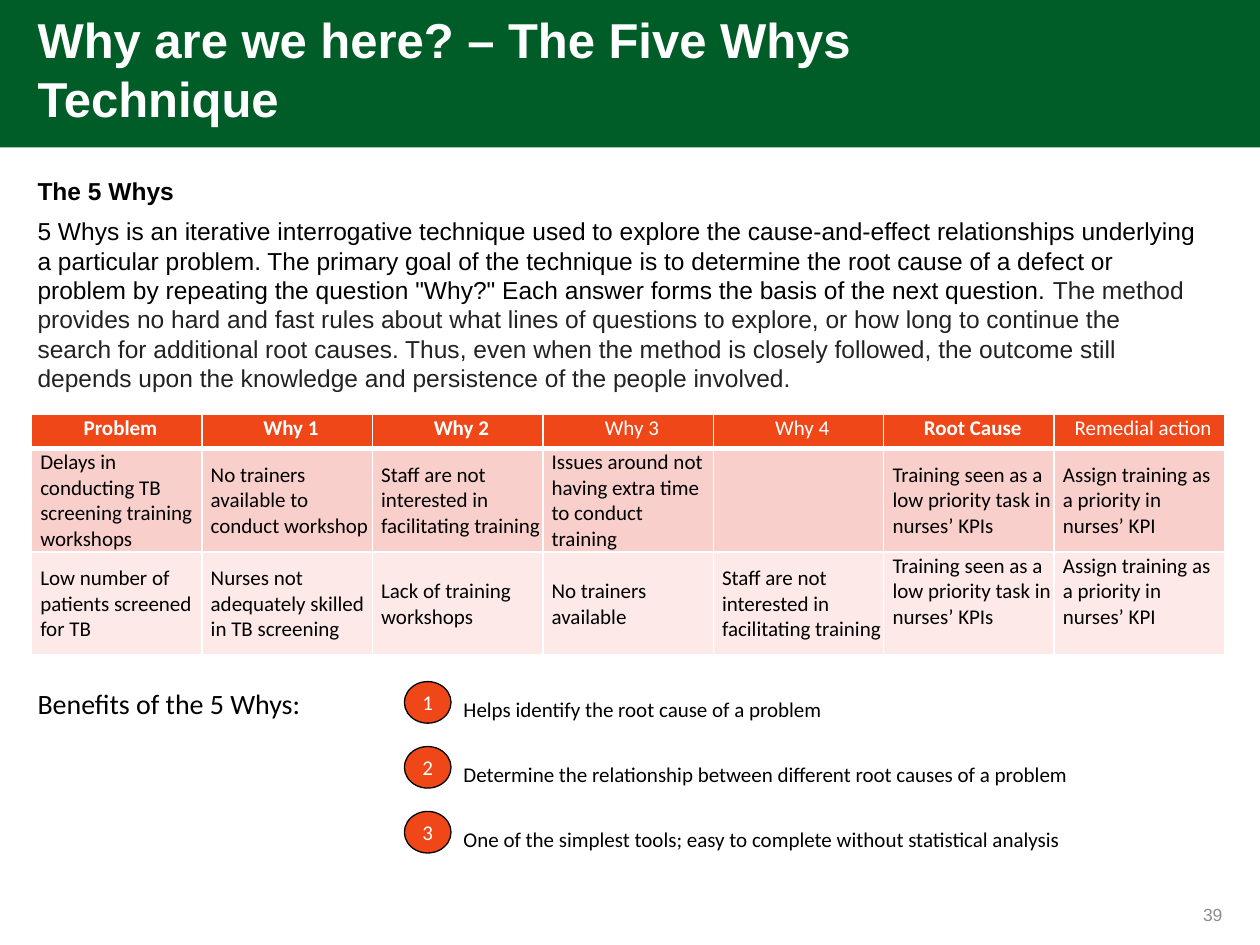
from lxml.etree import SubElement
from pptx import Presentation
from pptx.dml.color import RGBColor
from pptx.enum.shapes import MSO_SHAPE
from pptx.enum.text import MSO_ANCHOR, PP_ALIGN
from pptx.oxml.ns import qn
from pptx.util import Inches, Pt

GREEN = RGBColor(0x00, 0x5D, 0x28)
ORANGE = RGBColor(0xEF, 0x47, 0x18)
ROSE = RGBColor(0xF9, 0xCF, 0xCC)
BLUSH = RGBColor(0xFC, 0xE9, 0xE8)
WHITE = RGBColor(0xFF, 0xFF, 0xFF)
BLACK = RGBColor(0x00, 0x00, 0x00)
CHARCOAL = RGBColor(0x22, 0x22, 0x22)
GRAY = RGBColor(0x8C, 0x8C, 0x8C)

HEADERS = ["Problem", "Why 1", "Why 2", "Why 3", "Why 4", "Root Cause", "Remedial action"]
PLAIN_HEADERS = {"Why 3", "Why 4", "Remedial action"}
LOW_PRIORITY = "Training seen as a low priority task in nurses’ KPIs"
ASSIGN_PRIORITY = "Assign training as a priority in nurses’ KPI"
NOT_INTERESTED = "Staff are not interested in facilitating training"
ANALYSIS = [
    ["Delays in conducting TB screening training workshops",
     "No trainers available to conduct workshop", NOT_INTERESTED,
     "Issues around not having extra time to conduct training", "",
     LOW_PRIORITY, ASSIGN_PRIORITY],
    ["Low number of patients screened for TB",
     "Nurses not adequately skilled in TB screening", "Lack of training workshops",
     "No trainers available", NOT_INTERESTED, LOW_PRIORITY, ASSIGN_PRIORITY],
]
BENEFITS = [
    "Helps identify the root cause of a problem",
    "Determine the relationship between different root causes of a problem",
    "One of the simplest tools; easy to complete without statistical analysis",
]
DEFINITION = (
    "5 Whys is an iterative interrogative technique used to explore the "
    "cause-and-effect relationships underlying a particular problem. The primary goal "
    "of the technique is to determine the root cause of a defect or problem by "
    "repeating the question \"Why?\" Each answer forms the basis of the next question."
)
METHOD = (
    " The method provides no hard and fast rules about what lines of questions to "
    "explore, or how long to continue the search for additional root causes. Thus, "
    "even when the method is closely followed, the outcome still depends upon the "
    "knowledge and persistence of the people involved."
)


def style(font, color, **values):
    for name, value in values.items():
        setattr(font, name, value)
    font.color.rgb = color


def add_span(para, text, color, size, name="Calibri", bold=False):
    span = para.add_run()
    span.text = text
    style(span.font, color, size=Pt(size), name=name, bold=bold)


def add_text_box(page, left, top, width, height, anchor=MSO_ANCHOR.TOP):
    box = page.shapes.add_textbox(Inches(left), Inches(top), Inches(width), Inches(height))
    box.text_frame.word_wrap = True
    box.text_frame.vertical_anchor = anchor
    return box.text_frame


def add_filled_shape(page, kind, left, top, width, height, fill):
    shape = page.shapes.add_shape(
        kind, Inches(left), Inches(top), Inches(width), Inches(height))
    shape.shadow.inherit = False
    shape.fill.solid()
    shape.fill.fore_color.rgb = fill
    return shape


def add_banner(page):
    band = add_filled_shape(page, MSO_SHAPE.RECTANGLE, 0, 0, 10, 1.17, GREEN)
    band.line.fill.background()
    title = add_text_box(page, 0.2, 0.17, 7.75, 0.75, MSO_ANCHOR.MIDDLE)
    add_span(title.paragraphs[0], "Why are we here? – The Five Whys Technique",
             WHITE, 28, "Arial", True)


def add_definition(page):
    frame = add_text_box(page, 0.2, 1.35, 9.4, 1.83)
    heading = frame.paragraphs[0]
    heading.space_after = Pt(6)
    add_span(heading, "The 5 Whys", BLACK, 14, "Arial", True)
    body = frame.add_paragraph()
    add_span(body, DEFINITION, BLACK, 14, "Arial")
    add_span(body, METHOD, CHARCOAL, 14, "Arial")


def set_borders(cell, bottom_width):
    properties = cell._tc.get_or_add_tcPr()
    widths = {"a:lnL": 1, "a:lnR": 1, "a:lnT": 1, "a:lnB": bottom_width}
    for position, (tag, width) in enumerate(widths.items()):
        line = SubElement(properties, qn(tag), w=str(Pt(width)))
        fill = SubElement(line, qn("a:solidFill"))
        SubElement(fill, qn("a:srgbClr"), val=str(WHITE))
        properties.insert(position, line)


def fill_cell(cell, text, fill, color, align, anchor, bold=False, bottom_width=1):
    cell.fill.solid()
    cell.fill.fore_color.rgb = fill
    set_borders(cell, bottom_width)
    margins = {"margin_left": 0.01, "margin_right": 0.01, "margin_top": 0.01, "margin_bottom": 0}
    for name, value in margins.items():
        setattr(cell, name, Inches(value))
    cell.vertical_anchor = anchor
    para = cell.text_frame.paragraphs[0]
    para.alignment = align
    para._p.get_or_add_pPr().set("marL", str(Inches(0.06)))
    if text:
        add_span(para, text, color, 12, bold=bold)
    else:
        para.font.size = Pt(12)


def add_analysis_table(page):
    heights = [0.27, 0.82, 0.82]
    table = page.shapes.add_table(
        len(heights), len(HEADERS), Inches(0.25), Inches(3.29),
        Inches(9.47), Inches(sum(heights))).table
    for row, height in zip(table.rows, heights):
        row.height = Inches(height)
    for column, header in enumerate(HEADERS):
        fill_cell(table.cell(0, column), header, ORANGE, WHITE, PP_ALIGN.CENTER,
                  MSO_ANCHOR.TOP, header not in PLAIN_HEADERS, 3)
    for row, (texts, fill) in enumerate(zip(ANALYSIS, [ROSE, BLUSH]), 1):
        for column, text in enumerate(texts):
            at_top = row == 2 and column >= 5
            anchor = MSO_ANCHOR.TOP if at_top else MSO_ANCHOR.MIDDLE
            fill_cell(table.cell(row, column), text, fill, BLACK, PP_ALIGN.LEFT, anchor)


def add_benefit(page, number, text):
    top = 5.41 + 0.515 * (number - 1)
    badge = add_filled_shape(page, MSO_SHAPE.OVAL, 3.21, top, 0.37, 0.33, ORANGE)
    badge.line.color.rgb = BLACK
    badge.line.width = Pt(0.75)
    frame = badge.text_frame
    for side in ("left", "right", "top", "bottom"):
        setattr(frame, f"margin_{side}", 0)
    frame.vertical_anchor = MSO_ANCHOR.MIDDLE
    frame.paragraphs[0].alignment = PP_ALIGN.CENTER
    add_span(frame.paragraphs[0], str(number), WHITE, 12)
    label = add_text_box(page, 3.58, top + 0.07, 5.65, 0.3)
    add_span(label.paragraphs[0], text, BLACK, 12)


def add_benefits(page):
    heading = add_text_box(page, 0.2, 5.4, 3, 0.37)
    add_span(heading.paragraphs[0], "Benefits of the 5 Whys:", BLACK, 16)
    for number, text in enumerate(BENEFITS, 1):
        add_benefit(page, number, text)


def add_page_number(page):
    frame = add_text_box(page, 7.95, 7.11, 1.85, 0.3, MSO_ANCHOR.MIDDLE)
    frame.paragraphs[0].alignment = PP_ALIGN.RIGHT
    add_span(frame.paragraphs[0], "39", GRAY, 10, "Arial")


def main():
    deck = Presentation()
    deck.slide_width = Inches(10)
    deck.slide_height = Inches(7.5)
    page = deck.slides.add_slide(deck.slide_layouts[6])
    add_banner(page)
    add_definition(page)
    add_analysis_table(page)
    add_benefits(page)
    add_page_number(page)
    deck.save("out.pptx")


if __name__ == "__main__":
    main()
